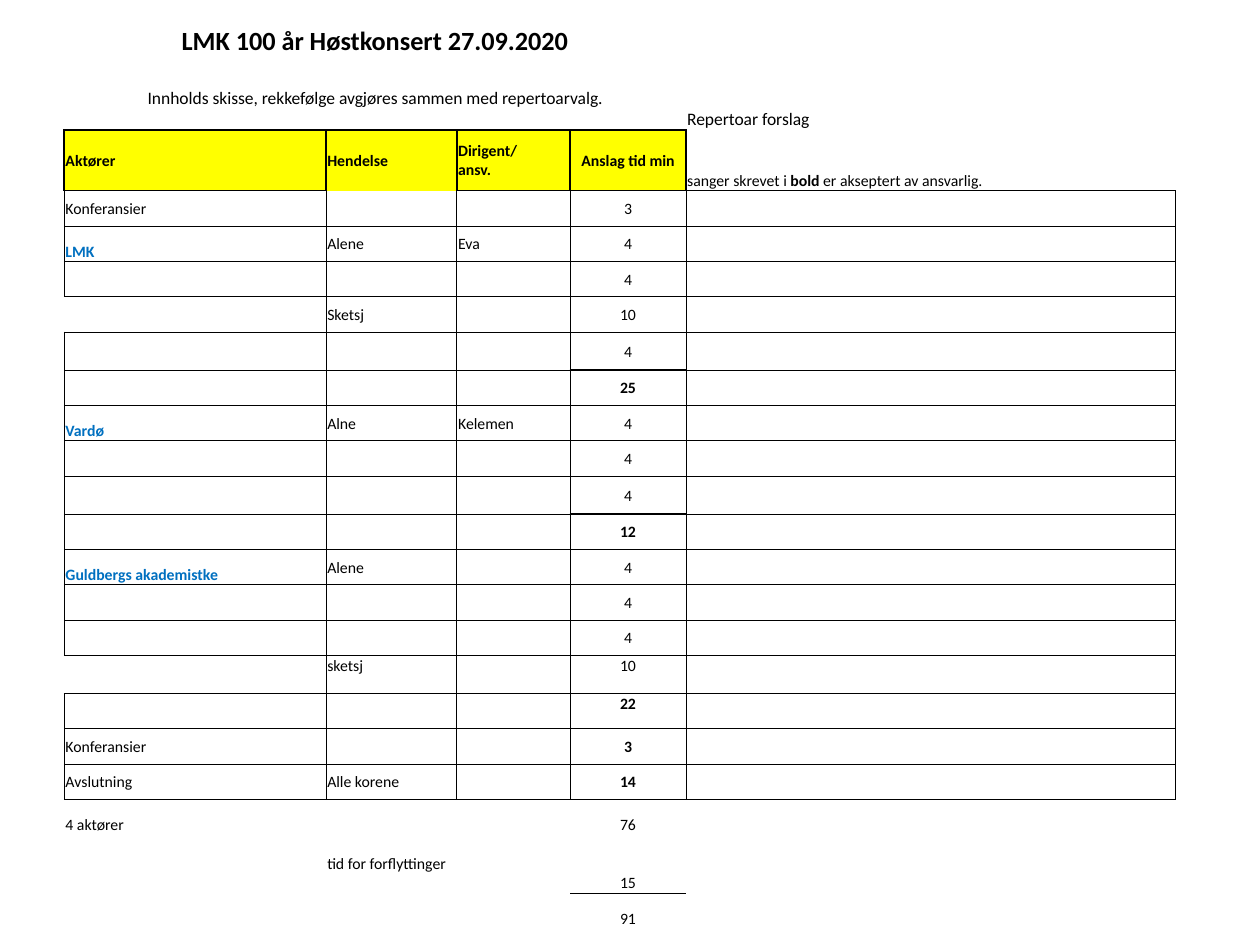
from dataclasses import dataclass
from lxml.etree import SubElement
from pptx import Presentation
from pptx.dml.color import RGBColor
from pptx.enum.text import MSO_ANCHOR, PP_ALIGN
from pptx.oxml.ns import qn
from pptx.util import Inches, Pt


@dataclass(frozen=True)
class Theme:
    font: str = "Calibri"
    ink: str = "000000"
    blue: str = "0070C0"
    yellow: str = "FFFF00"
    title: float = 15
    lead: float = 10
    body: float = 9
    thin: float = 0.5
    thick: float = 1


THEME = Theme()
PLAIN = "{2D5ABB26-0587-4C30-8999-92F81FD0307C}"
TOP, MID, LOW = MSO_ANCHOR.TOP, MSO_ANCHOR.MIDDLE, MSO_ANCHOR.BOTTOM
COLS = [2.08, 1.04, 0.9, 0.92, 3.89]
HEADS = ["Aktører", "Hendelse", "Dirigent/\nansv.", "Anslag tid min"]
ACTS = [
    ("Konferansier", "", "", "3"),
    ("LMK", "Alene", "Eva", "4"),
    ("", "", "", "4"),
    ("", "Sketsj", "", "10"),
    ("", "", "", "4"),
    ("", "", "", "25"),
    ("Vardø", "Alne", "Kelemen", "4"),
    ("", "", "", "4"),
    ("", "", "", "4"),
    ("", "", "", "12"),
    ("Guldbergs akademistke", "Alene", "", "4"),
    ("", "", "", "4"),
    ("", "", "", "4"),
    ("", "sketsj", "", "10"),
    ("", "", "", "22"),
    ("Konferansier", "", "", "3"),
    ("Avslutning", "Alle korene", "", "14"),
]
SUMS = [("4 aktører", "", "", "76"), ("", "tid for forflyttinger", "", "15"),
        ("", "", "", "91")]
CHOIRS = {"LMK", "Vardø", "Guldbergs akademistke"}
BOLD = {5, 9, 14, 15, 16}
RULED = {4, 8, 13}
OPEN = {3, 13}
HIGH = {13, 14}
FIRST = 3
LAST = FIRST + len(ACTS)


def write(cell, *parts, size=THEME.body, color=THEME.ink, bold=False,
          center=False, anchor=MID):
    cell.margin_left = cell.margin_right = cell.margin_top = Inches(0.01)
    cell.margin_bottom = 0
    cell.vertical_anchor = anchor
    para = cell.text_frame.paragraphs[0]
    para.alignment = PP_ALIGN.CENTER if center else PP_ALIGN.LEFT
    para._p.get_or_add_endParaRPr().set("sz", str(int(size * 100)))
    for part in parts:
        text, strong = part if isinstance(part, tuple) else (part, bold)
        for num, line in enumerate(text.split("\n")):
            if num:
                para.add_line_break()
            if line:
                run = para.add_run()
                run.text = line
                font = run.font
                font.name, font.size, font.bold = THEME.font, Pt(size), strong
                font.color.rgb = RGBColor.from_string(color)


def frame(cell, fill=None, **edges):
    props = cell._tc.get_or_add_tcPr()
    for side in "LRTB":
        width = edges.get(side, 0)
        line = SubElement(props, qn(f"a:ln{side}"), w=str(int(Pt(width))))
        if width:
            paint = SubElement(line, qn("a:solidFill"))
            SubElement(paint, qn("a:srgbClr"), val=THEME.ink)
        else:
            SubElement(line, qn("a:noFill"))
    if fill:
        cell.fill.solid()
        cell.fill.fore_color.rgb = RGBColor.from_string(fill)
    else:
        cell.fill.background()


def add_head(grid):
    thin, thick = THEME.thin, THEME.thick
    titles = [("LMK 100 år Høstkonsert 27.09.2020", THEME.title, True, 0),
              ("Innholds skisse, rekkefølge avgjøres sammen med repertoarvalg.",
               THEME.lead, False, thick)]
    for row, (text, size, bold, rule) in enumerate(titles):
        for col in range(4):
            frame(grid.cell(row, col), B=rule)
        grid.cell(row, 0).merge(grid.cell(row, 3))
        write(grid.cell(row, 0), text, size=size, bold=bold, center=True)
        frame(grid.cell(row, 4))
    write(grid.cell(0, 4))
    write(grid.cell(1, 4), "Repertoar forslag", size=THEME.lead, anchor=LOW)
    for col, text in enumerate(HEADS):
        cell = grid.cell(2, col)
        write(cell, text, bold=True, center=col == 3)
        frame(cell, THEME.yellow, L=thick, R=thick, T=thick,
              B=0 if col == 1 else thin)
    note = grid.cell(2, 4)
    write(note, ("sanger skrevet i", False), (" bold", True),
          (" er akseptert av ansvarlig.", False), anchor=LOW)
    frame(note, L=thick, B=thin)


def add_acts(grid):
    for num, act in enumerate(ACTS):
        for col, text in enumerate(act + ("",)):
            cell = grid.cell(FIRST + num, col)
            choir = text in CHOIRS
            write(cell, text, color=THEME.blue if choir else THEME.ink,
                  bold=choir or (col == 3 and num in BOLD), center=col == 3,
                  anchor=LOW if choir else TOP if num in HIGH else MID)
            edges = dict.fromkeys("LRTB", THEME.thin)
            if col == 0 and num in OPEN:
                edges["L"] = 0
            if col == 1 and num == 0:
                edges["T"] = 0
            if col == 3 and num in RULED:
                edges["B"] = THEME.thick
            if col == 3 and num - 1 in RULED:
                edges["T"] = THEME.thick
            frame(cell, **edges)


def add_sums(grid):
    for num, line in enumerate(SUMS):
        for col, text in enumerate(line + ("",)):
            cell = grid.cell(LAST + num, col)
            write(cell, text, center=col == 3, anchor=MID if col == 1 else LOW)
            above = num == 0 or (num == 2 and col == 3)
            below = num == 1 and col == 3
            frame(cell, T=THEME.thin * above, B=THEME.thin * below)


def add_plan(slide, left, top, width, height):
    rows = [0.39, 0.51, 0.48]
    rows += [0.3 if num in RULED else 0.28 for num in range(len(ACTS))]
    rows += [0.28, 0.46, 0.28]
    grid = slide.shapes.add_table(len(rows), len(COLS), Inches(left),
                                  Inches(top), Inches(width),
                                  Inches(height)).table
    grid.first_row = grid.horz_banding = False
    grid._tbl.tblPr.find(qn("a:tableStyleId")).text = PLAIN
    for col, size in zip(grid.columns, COLS):
        col.width = Inches(size * width / sum(COLS))
    for row, size in zip(grid.rows, rows):
        row.height = Inches(size * height / sum(rows))
    add_head(grid)
    add_acts(grid)
    add_sums(grid)


def main():
    deck = Presentation()
    deck.slide_width, deck.slide_height = Inches(10), Inches(7.5)
    slide = deck.slides.add_slide(deck.slide_layouts[6])
    add_plan(slide, 0.51, 0.13, 8.82, 7.24)
    deck.save("out.pptx")


if __name__ == "__main__":
    main()
